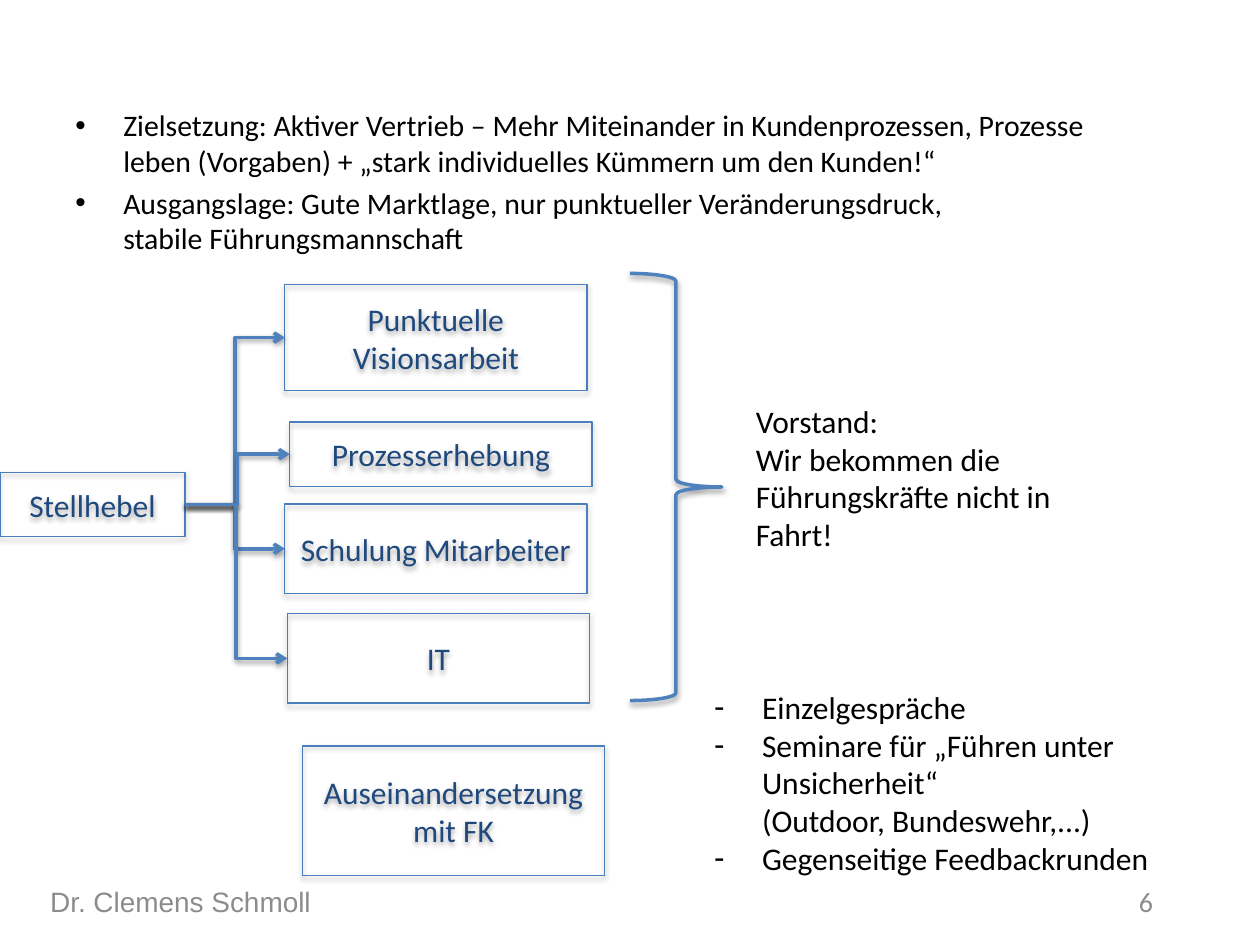
from typing import NamedTuple, Optional

import lxml.etree
import pptx
import pptx.dml.color
import pptx.enum.shapes
import pptx.enum.text
import pptx.oxml.ns
import pptx.util

RGBColor = pptx.dml.color.RGBColor
PP_ALIGN = pptx.enum.text.PP_ALIGN
MSO_ANCHOR = pptx.enum.text.MSO_ANCHOR
MSO_SHAPE = pptx.enum.shapes.MSO_SHAPE
Pt = pptx.util.Pt
qn = pptx.oxml.ns.qn

BLACK = RGBColor(0x00, 0x00, 0x00)
GRAY = RGBColor(0x8C, 0x8C, 0x8C)
NAVY = RGBColor(0x1F, 0x49, 0x7D)
BORDER = RGBColor(0x4B, 0x7E, 0xBC)
BLUE = RGBColor(0x4F, 0x81, 0xBD)

COLS, ROWS = 100, 75
CELL = pptx.util.Inches(0.1)
HANGING = 3.8  # columns


class Area(NamedTuple):
    """Place on the slide grid, in columns and rows."""
    col: float
    row: float
    cols: float
    rows: float

    def emu(self) -> list[int]:
        return [grid(n) for n in self]


class Box(NamedTuple):
    text: str
    area: Area
    is_lever: bool = True


class TextBlock(NamedTuple):
    area: Area
    paragraphs: list[str]
    size: float = 18
    font: str = "Calibri"
    color: RGBColor = BLACK
    bullet: Optional[str] = None
    gap: float = 0
    align: PP_ALIGN = PP_ALIGN.LEFT
    anchor: MSO_ANCHOR = MSO_ANCHOR.TOP


SOURCE = Box("Stellhebel", Area(0, 37.5, 14.7, 5.1))
BOXES = [
    Box("Punktuelle Visionsarbeit", Area(22.6, 22.6, 24, 8.4)),
    Box("Prozesserhebung", Area(23, 33.5, 24, 5.1)),
    Box("Schulung Mitarbeiter", Area(22.6, 40, 24, 7.1)),
    Box("IT", Area(22.8, 48.7, 24, 7.1)),
    Box("Auseinandersetzung mit FK", Area(24, 59.2, 24, 10.3), is_lever=False),
]
BRACE = Area(50, 21.7, 7.3, 33.9)
TEXTS = [
    TextBlock(Area(3, 69.5, 63.6, 4), ["Dr. Clemens Schmoll"], 16, "Arial", GRAY,
              anchor=MSO_ANCHOR.MIDDLE),
    TextBlock(Area(69.2, 69.5, 23.3, 4), ["6"], 16, color=GRAY,
              align=PP_ALIGN.RIGHT, anchor=MSO_ANCHOR.MIDDLE),
    TextBlock(Area(5, 8, 87.5, 13), [
        "Zielsetzung: Aktiver Vertrieb – Mehr Miteinander in Kundenprozessen, "
        "Prozesse leben (Vorgaben) + „stark individuelles Kümmern um den Kunden!“",
        "Ausgangslage: Gute Marktlage, nur punktueller Veränderungsdruck, \n"
        "stabile Führungsmannschaft",
    ], 17, bullet="•", gap=3.4),
    TextBlock(Area(59, 31.4, 33, 15.1), [
        "Vorstand:", "Wir bekommen die", "Führungskräfte nicht in\nFahrt!"]),
    TextBlock(Area(55.7, 54.1, 44, 18.7), [
        "Einzelgespräche",
        "Seminare für „Führen unter\nUnsicherheit“ \n(Outdoor, Bundeswehr,...)",
        "Gegenseitige Feedbackrunden",
    ], bullet="-"),
]


def grid(n: float) -> int:
    return round(n * CELL)


def add_shadow(sp, opacity: int, distance: float) -> None:
    """Cast a soft shadow downwards; call after fill and line are set."""
    effects = lxml.etree.SubElement(sp._element.spPr, qn("a:effectLst"))
    shadow = lxml.etree.SubElement(
        effects, qn("a:outerShdw"), blurRad=str(Pt(3.1)), dist=str(Pt(distance)),
        dir="5400000", rotWithShape="0")
    color = lxml.etree.SubElement(shadow, qn("a:srgbClr"), val="000000")
    lxml.etree.SubElement(color, qn("a:alpha"), val=str(opacity * 1000))


def set_line(sp, color: RGBColor, width: float) -> None:
    sp.line.color.rgb = color
    sp.line.width = Pt(width)


def set_font(p, size: float, font: str, color: RGBColor) -> None:
    for r in p.runs:
        r.font.size = Pt(size)
        r.font.name = font
        r.font.color.rgb = color


def add_bullet(p, char: str) -> None:
    pPr = p._p.get_or_add_pPr()
    pPr.set("marL", str(grid(HANGING)))
    pPr.set("indent", str(-grid(HANGING)))
    lxml.etree.SubElement(pPr, qn("a:buFont"), typeface="Arial")
    lxml.etree.SubElement(pPr, qn("a:buChar"), char=char)


def add_text(s, block: TextBlock) -> None:
    tf = s.shapes.add_textbox(*block.area.emu()).text_frame
    tf.word_wrap = True
    tf.vertical_anchor = block.anchor
    for i, text in enumerate(block.paragraphs):
        p = tf.add_paragraph() if i else tf.paragraphs[0]
        p.text = text
        p.alignment = block.align
        if i and block.gap:
            p.space_before = Pt(block.gap)
        if block.bullet:
            add_bullet(p, block.bullet)
        set_font(p, block.size, block.font, block.color)


def add_box(s, box: Box):
    sp = s.shapes.add_shape(MSO_SHAPE.RECTANGLE, *box.area.emu())
    sp.fill.background()
    set_line(sp, BORDER, 0.75)
    add_shadow(sp, 35, 1.8)
    tf = sp.text_frame
    tf.text = box.text
    tf.word_wrap = True
    tf.vertical_anchor = MSO_ANCHOR.MIDDLE
    tf.margin_left = tf.margin_right = grid(1.1)
    tf.margin_top = tf.margin_bottom = grid(0.6)
    p = tf.paragraphs[0]
    p.alignment = PP_ALIGN.CENTER
    set_font(p, 18, "Calibri", NAVY)
    return sp


def add_arrow(s, start, end) -> None:
    """Lead an elbow arrow from the right side of start to the left side of end."""
    cx = s.shapes.add_connector(pptx.enum.shapes.MSO_CONNECTOR.ELBOW, 0, 0, 0, 0)
    cx.begin_connect(start, 3)
    cx.end_connect(end, 1)
    set_line(cx, BLUE, 2)
    lxml.etree.SubElement(cx._element.spPr.find(qn("a:ln")), qn("a:tailEnd"), type="arrow")
    add_shadow(cx, 38, 1.6)


def add_brace(s, area: Area) -> None:
    sp = s.shapes.add_shape(MSO_SHAPE.RIGHT_BRACE, *area.emu())
    sp.fill.background()
    set_line(sp, BLUE, 2)
    add_shadow(sp, 38, 1.6)


def main() -> None:
    prs = pptx.Presentation()
    prs.slide_width, prs.slide_height = grid(COLS), grid(ROWS)
    s = prs.slides.add_slide(prs.slide_layouts[6])
    for block in TEXTS:
        add_text(s, block)
    source = add_box(s, SOURCE)
    for box in BOXES:
        sp = add_box(s, box)
        if box.is_lever:
            add_arrow(s, source, sp)
    add_brace(s, BRACE)
    prs.save("out.pptx")


if __name__ == "__main__":
    main()
